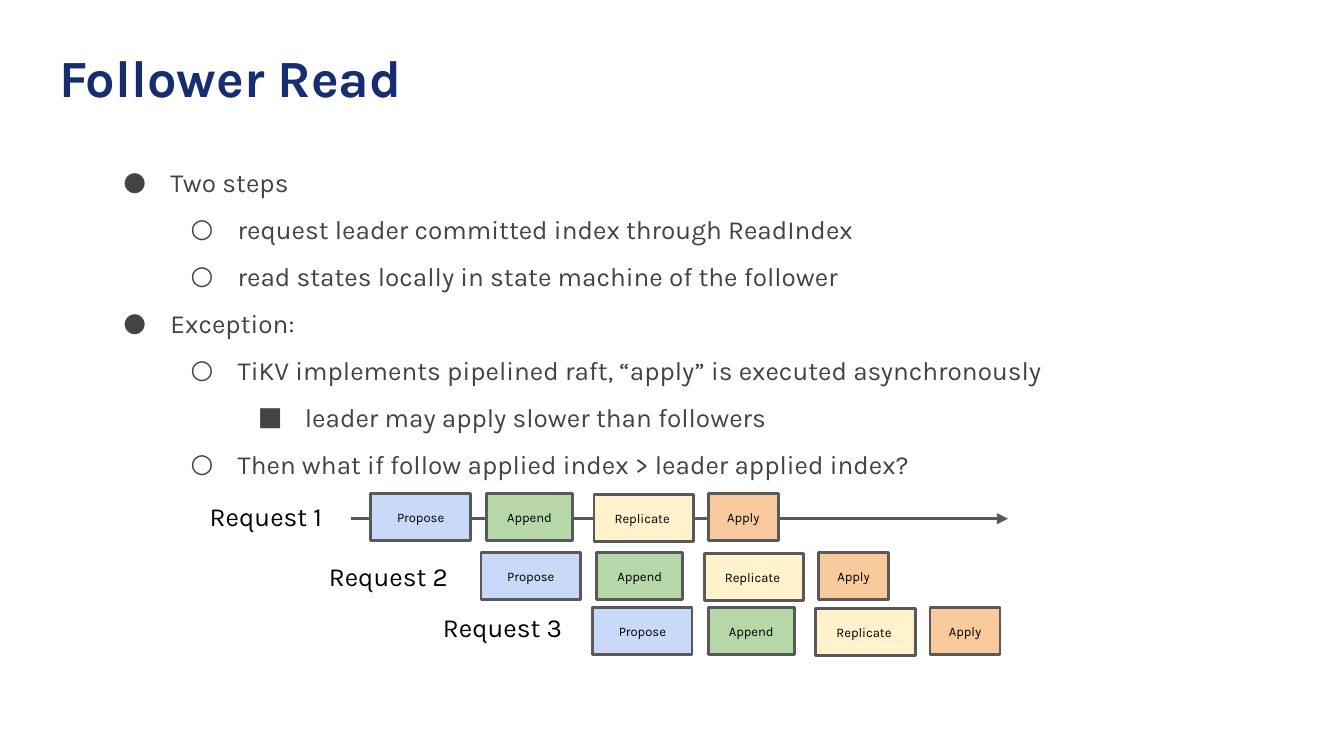
from lxml.etree import SubElement as Sub
from pptx import Presentation
from pptx.dml.color import RGBColor as RGB
from pptx.enum.shapes import MSO_CONNECTOR as Link, MSO_SHAPE as Shape
from pptx.enum.text import MSO_ANCHOR as Anchor, MSO_AUTO_SIZE as Fit, PP_ALIGN as Align
from pptx.oxml.ns import qn
from pptx.util import Inches, Pt

NAVY = RGB(0x17, 0x2D, 0x72)
GRAY = RGB(0x43, 0x43, 0x43)
EDGE = RGB(0x59, 0x59, 0x59)
BLACK = RGB(0, 0, 0)
BLUE = RGB(0xC9, 0xDA, 0xF8)
GREEN = RGB(0xB6, 0xD7, 0xA8)
CREAM = RGB(0xFF, 0xF2, 0xCC)
PEACH = RGB(0xF9, 0xCB, 0x9C)

TITLE = "Follower Read"
POINTS = [
    (0, "Two steps"),
    (1, "request leader committed index through ReadIndex"),
    (1, "read states locally in state machine of the follower"),
    (0, "Exception:"),
    (1, "TiKV implements pipelined raft, “apply” is executed asynchronously"),
    (2, "leader may apply slower than followers"),
    (1, "Then what if follow applied index > leader applied index?"),
]
MARKS = "●○■"
STAGES = [
    ("Propose", 0, 0, 0.74, BLUE),
    ("Append", 0.86, 0, 0.64, GREEN),
    ("Replicate ", 1.66, 0.01, 0.74, CREAM),
    ("Apply", 2.51, 0, 0.52, PEACH),
]
ROWS = [
    ("Request 1", 1.43, 3.62, 2.76, 3.67),
    ("Request 2", 2.34, 4.07, 3.58, 4.11),
    ("Request 3", 3.19, 4.45, 4.41, 4.52),
]
HIGH = 0.35
WIDE = Inches(10)

FACE = "Karla"
HEAD = {"size": Pt(28), "bold": True, "name": FACE}
BODY = {"size": Pt(14), "name": FACE}
SMALL = {"size": Pt(7), "name": FACE}
FRAME = {"word_wrap": True, "auto_size": Fit.NONE}
FRAME |= {f"margin_{side}": Inches(0.1) for side in ("left", "top", "right", "bottom")}


def apply(item, look):
    for key, value in look.items():
        setattr(item, key, value)


def frame(shape, anchor=Anchor.TOP):
    apply(shape.text_frame, FRAME | {"vertical_anchor": anchor})
    return shape.text_frame


def write(para, text, look, color, align=Align.LEFT):
    para.alignment = align
    run = para.add_run()
    run.text = text
    apply(run.font, look)
    run.font.color.rgb = color


def bullet(para, level):
    para.level = level
    para.line_spacing = 1.5
    props = para._p.get_or_add_pPr()
    props.set("marL", str(Inches(0.5 * (level + 1))))
    props.set("indent", str(Inches(-0.35)))
    Sub(Sub(props, qn("a:buClr")), qn("a:srgbClr"), val=str(GRAY))
    Sub(props, qn("a:buSzPts"), val="1400")
    Sub(props, qn("a:buFont"), typeface=FACE)
    Sub(props, qn("a:buChar"), char=MARKS[level])


def stroke(line):
    line.color.rgb = EDGE
    line.width = Pt(1.5)


def place(x, y, w, h):
    return [Inches(n) for n in (x, y, w, h)]


deck = Presentation()
apply(deck, {"slide_width": WIDE, "slide_height": WIDE * 9 // 16})
slide = deck.slides.add_slide(deck.slide_layouts[5])
shapes = slide.shapes

title = shapes.title
apply(title, dict(zip(("left", "top", "width", "height"), place(0.34, 0.24, 9.32, 0.63))))
write(frame(title).paragraphs[0], TITLE, HEAD, NAVY)

body = frame(shapes.add_textbox(*place(0.67, 1.02, 8.08, 2.35)))
for i, (level, text) in enumerate(POINTS):
    para = body.add_paragraph() if i else body.paragraphs[0]
    bullet(para, level)
    write(para, text, BODY, GRAY)

arrow = shapes.add_connector(Link.STRAIGHT, *place(2.61, 3.86, 7.5, 3.86))
stroke(arrow.line)
props = arrow._element.spPr
Sub(props.find(qn("a:ln")), qn("a:tailEnd"), type="triangle")
Sub(props, qn("a:effectLst"))

for name, left, top, start, base in ROWS:
    label = frame(shapes.add_textbox(*place(left, top, 1.1, HIGH)))
    write(label.paragraphs[0], name, BODY, BLACK, Align.CENTER)
    for stage, dx, dy, wide, color in STAGES:
        box = shapes.add_shape(Shape.RECTANGLE, *place(start + dx, base + dy, wide, HIGH))
        box.shadow.inherit = False
        box.fill.solid()
        box.fill.fore_color.rgb = color
        stroke(box.line)
        write(frame(box, Anchor.MIDDLE).paragraphs[0], stage, SMALL, BLACK, Align.CENTER)

deck.save("out.pptx")
